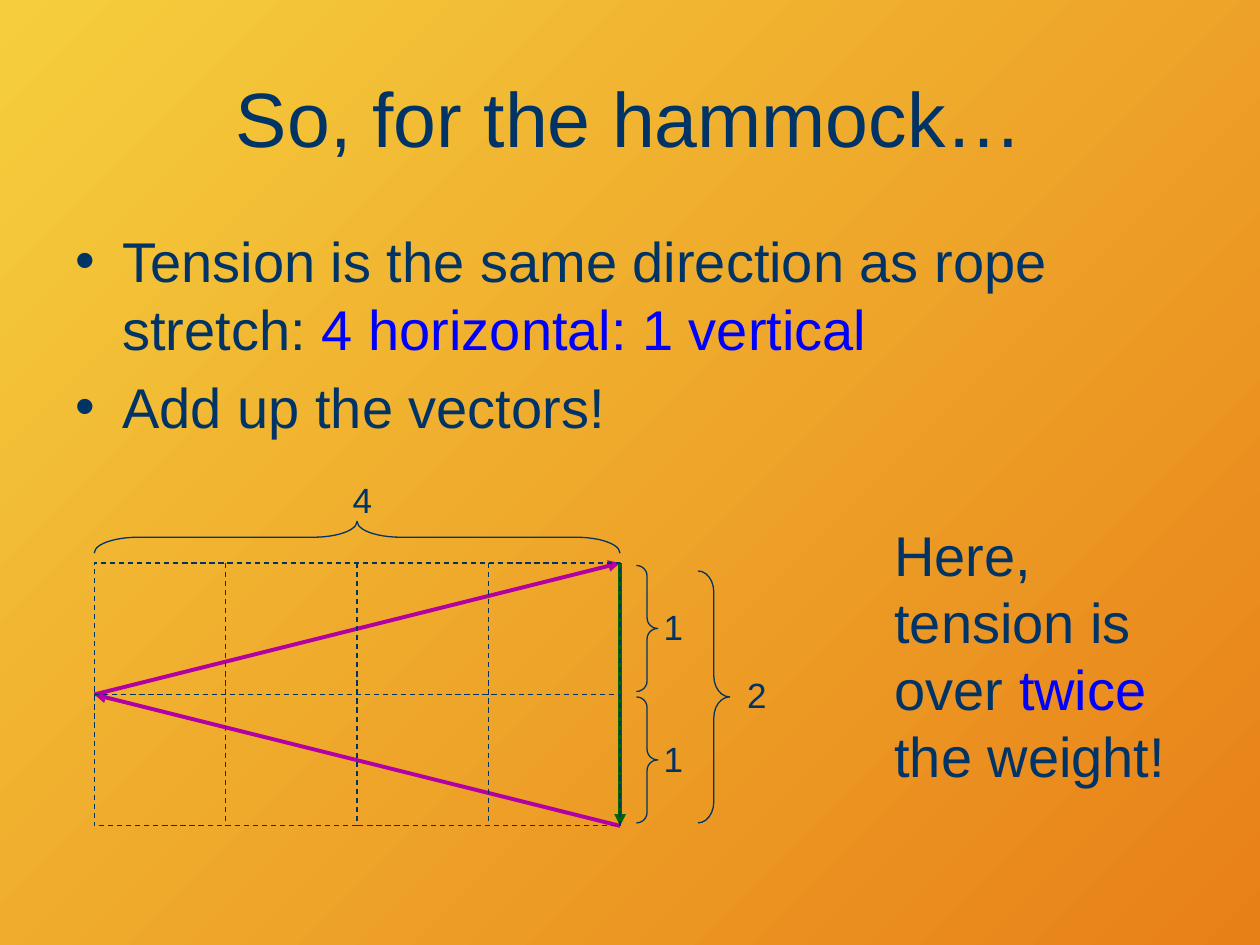
from lxml import etree
from pptx import Presentation
from pptx import util as u
from pptx.dml import color
from pptx.enum import dml, shapes, text
from pptx.oxml import ns

NAVY, BLUE, PURPLE, GREEN = "003366", "0000FF", "B300A4", "006600"
LEFT, TOP, CELL = 1.9, 11.35, 2.65
COLS, ROWS = 4, 2


def rgb(value):
    return color.RGBColor.from_string(value)


def add_run(p, content, size, col=NAVY):
    r = p.add_run()
    r.text = content
    r.font.name = "Arial"
    r.font.size = u.Pt(size)
    r.font.color.rgb = rgb(col)


def set_title(s, content):
    sp = s.shapes.title
    sp.left, sp.top, sp.width, sp.height = map(u.Cm, (1.27, 0.76, 22.86, 3.18))
    sp.text_frame.vertical_anchor = text.MSO_ANCHOR.MIDDLE
    p = sp.text_frame.paragraphs[0]
    p.alignment = text.PP_ALIGN.CENTER
    add_run(p, content, 44)


def add_bullet(p):
    pPr = p._p.get_or_add_pPr()
    pPr.set("marL", str(u.Cm(0.95)))
    pPr.set("indent", str(-u.Cm(0.95)))
    etree.SubElement(pPr, ns.qn("a:buFont"), typeface="Arial")
    etree.SubElement(pPr, ns.qn("a:buChar"), char="•")


def add_text(s, box, paragraphs, size=32, before=6.4, align=text.PP_ALIGN.LEFT, bullets=False):
    tf = s.shapes.add_textbox(*map(u.Cm, box)).text_frame
    tf.word_wrap = True
    for i, runs in enumerate(paragraphs):
        p = tf.add_paragraph() if i else tf.paragraphs[0]
        p.alignment = align
        p.space_before = u.Pt(before)
        if bullets:
            add_bullet(p)
        for run in runs:
            add_run(p, run[0], size, *run[1:])


def add_label(s, x, y, content):
    add_text(s, (x, y, 0.84, 1.09), [[(content,)]], 20, 10, text.PP_ALIGN.CENTER)


def style_line(line, col, width, dashed=False):
    line.color.rgb = rgb(col)
    line.width = u.Pt(width)
    if dashed:
        line.dash_style = dml.MSO_LINE.DASH


def add_line(s, start, end, col=NAVY, width=0.75, dashed=False, arrow=False):
    sp = s.shapes.add_connector(shapes.MSO_CONNECTOR.STRAIGHT, *map(u.Cm, start + end))
    style_line(sp.line, col, width, dashed)
    if arrow:
        etree.SubElement(sp.line._get_or_add_ln(), ns.qn("a:tailEnd"), type="triangle")
    etree.SubElement(sp._element.spPr, ns.qn("a:effectLst"))


def add_outline(s, kind, box, dashed=False):
    sp = s.shapes.add_shape(kind, *map(u.Cm, box))
    sp.shadow.inherit = False
    sp.fill.background()
    style_line(sp.line, NAVY, 0.75, dashed)
    return sp


def add_brace(s, x, y, width, height, rotation=0):
    sp = add_outline(s, shapes.MSO_SHAPE.RIGHT_BRACE, (x, y, width, height))
    sp.adjustments[0] = height / width / 12
    sp.rotation = rotation


def add_grid(s, right, middle, bottom):
    add_outline(s, shapes.MSO_SHAPE.RECTANGLE, (LEFT, TOP, COLS * CELL, ROWS * CELL), dashed=True)
    add_line(s, (LEFT, middle), (right, middle), dashed=True)
    for col in range(1, COLS):
        x = LEFT + col * CELL
        add_line(s, (x, TOP), (x, bottom), dashed=True)


def add_vectors(s, right, middle, bottom):
    for start, end, col in [
        ((LEFT, middle), (right, TOP), PURPLE),
        ((right, bottom), (LEFT, middle), PURPLE),
        ((right, TOP), (right, bottom), GREEN),
    ]:
        add_line(s, start, end, col, 2.25, arrow=True)


def add_measures(s):
    add_brace(s, 6.88, 5.53, 0.64, COLS * CELL, 270)
    add_label(s, 6.86, 9.53, "4")
    for row in range(ROWS):
        offset = row * CELL
        add_brace(s, 12.83, 11.4 + offset, 0.43, 2.54)
        add_label(s, 13.13, 12.09 + offset, "1")
    add_brace(s, 14.07, 11.51, 0.64, 5.08)
    add_label(s, 14.81, 13.46, "2")


def set_background(s):
    fill = s.background.fill
    fill.gradient()
    fill.gradient_angle = 315
    for stop, col in zip(fill.gradient_stops, ("F5CE3D", "E88018")):
        stop.color.rgb = rgb(col)


def main():
    prs = Presentation()
    prs.slide_width, prs.slide_height = u.Cm(25.4), u.Cm(19.05)
    s = prs.slides.add_slide(prs.slide_layouts[5])
    set_background(s)
    set_title(s, "So, for the hammock…")
    add_text(s, (1.27, 4.45, 22.86, 4.88), [
        [("Tension is the same direction as rope stretch: ",), ("4 horizontal: 1 vertical", BLUE)],
        [("Add up the vectors!",)],
    ], bullets=True)
    edges = LEFT + COLS * CELL, TOP + CELL, TOP + ROWS * CELL
    add_vectors(s, *edges)
    add_grid(s, *edges)
    add_measures(s)
    add_text(s, (17.78, 10.36, 6.55, 6.35), [
        [("Here, tension is over ",), ("twice", BLUE), (" the weight!",)],
    ])
    prs.save("out.pptx")


if __name__ == "__main__":
    main()
